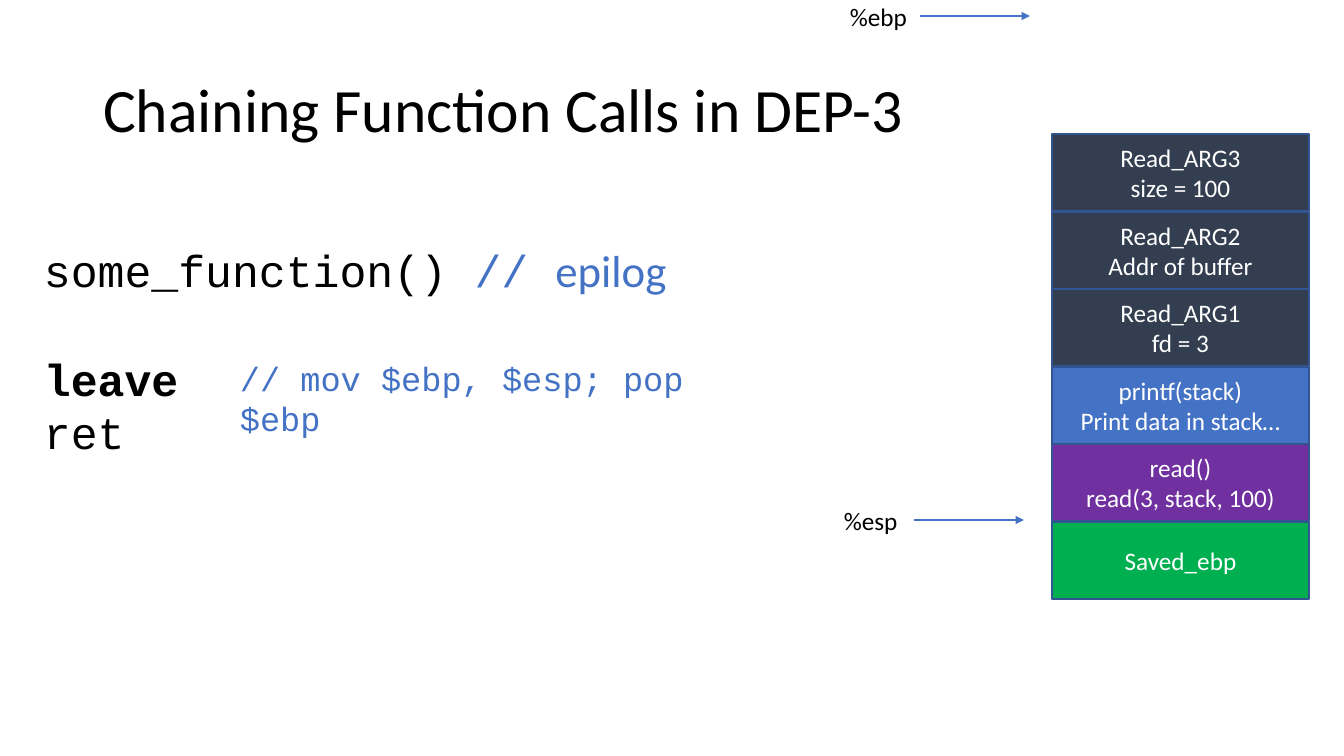
"""Build the slide on chaining function calls under DEP."""
from lxml.etree import SubElement
from pptx import Presentation
from pptx.dml.color import RGBColor
from pptx.enum.shapes import MSO_CONNECTOR as CONN, MSO_SHAPE as SHAPE
from pptx.enum.text import MSO_ANCHOR as ANCHOR, PP_ALIGN as ALIGN
from pptx.oxml.ns import qn
from pptx.util import Pt

PX = 12192000 / 1344
BLACK = RGBColor(0x00, 0x00, 0x00)
WHITE = RGBColor(0xFF, 0xFF, 0xFF)
SLATE = RGBColor(0x33, 0x3F, 0x50)
BLUE = RGBColor(0x44, 0x72, 0xC4)
PURPLE = RGBColor(0x70, 0x30, 0xA0)
GREEN = RGBColor(0x00, 0xB0, 0x50)
EDGE = RGBColor(0x32, 0x54, 0x91)
SANS, MONO = "Calibri", "Courier New"
STACK = [
    (["Read_ARG3", "size = 100"], SLATE),
    (["Read_ARG2", "Addr of buffer"], SLATE),
    (["Read_ARG1", "fd = 3"], SLATE),
    (["printf(stack)", "Print data in stack…"], BLUE),
    (["read()", "read(3, stack, 100)"], PURPLE),
    (["Saved_ebp"], GREEN),
]


def emu(*lengths):
    return [round(n * PX) for n in lengths]


def style(font, size, color, name=SANS, bold=False):
    font.size, font.name, font.bold = Pt(size), name, bold
    font.color.rgb = color


class Deck:
    def __init__(self):
        self.prs = Presentation()
        self.prs.slide_width, self.prs.slide_height = emu(1344, 756)
        self.slide = self.prs.slides.add_slide(self.prs.slide_layouts[5])

    def title(self, text, *box):
        sp = self.slide.shapes.title
        sp.left, sp.top, sp.width, sp.height = emu(*box)
        tf = sp.text_frame
        tf.text = text
        tf.vertical_anchor = ANCHOR.MIDDLE
        p = tf.paragraphs[0]
        p.alignment, p.line_spacing = ALIGN.LEFT, 0.9
        style(p.font, 44, BLACK)

    def cell(self, lines, fill, *box):
        sp = self.slide.shapes.add_shape(SHAPE.RECTANGLE, *emu(*box))
        sp.shadow.inherit = False
        sp.fill.solid()
        sp.fill.fore_color.rgb = fill
        sp.line.color.rgb = EDGE
        sp.line.width = Pt(1)
        tf = sp.text_frame
        tf.text = "\n".join(lines)
        tf.vertical_anchor = ANCHOR.MIDDLE
        for p in tf.paragraphs:
            p.alignment = ALIGN.CENTER
            style(p.font, 18, WHITE)

    def text(self, text, size, color, name, *box, wrap=True):
        tf = self.slide.shapes.add_textbox(*emu(*box)).text_frame
        tf.word_wrap = wrap
        tf.text = text
        for p in tf.paragraphs:
            style(p.font, size, color, name)
        return tf

    def arrow(self, x, y, length):
        line = self.slide.shapes.add_connector(
            CONN.STRAIGHT, *emu(x, y, x + length, y))
        line.line.color.rgb = BLUE
        line.line.width = Pt(1.5)
        SubElement(line.line._get_or_add_ln(), qn("a:tailEnd"), type="triangle")
        SubElement(line._element.spPr, qn("a:effectLst"))

    def pointer(self, label, x, y):
        self.text(label, 18, BLACK, SANS, x, y, 77, 40, wrap=False)
        self.arrow(x + 80, y + 20, 110)


def main():
    deck = Deck()
    deck.title("Chaining Function Calls in DEP-3", 93, 40, 1159, 146)
    for i, (lines, fill) in enumerate(STACK):
        deck.cell(lines, fill, 1052, 134 + round(i * 77.6), 257, 77)
    deck.pointer("%esp", 834, 500)
    deck.pointer("%ebp", 840, -4)

    tf = deck.text("some_function() \nleave\nret", 32, BLACK, MONO,
                   34, 238, 659, 228)
    call, leave, _ = tf.paragraphs
    for text, name in (("// ", MONO), ("epilog", SANS)):
        r = call.add_run()
        r.text = text
        style(r.font, 32, BLUE, name)
    leave.space_before = Pt(39)
    leave.font.bold = True
    deck.text("// mov $ebp, $esp; pop $ebp", 24, BLUE, MONO,
              230, 353, 526, 50)
    deck.prs.save("out.pptx")


if __name__ == "__main__":
    main()
